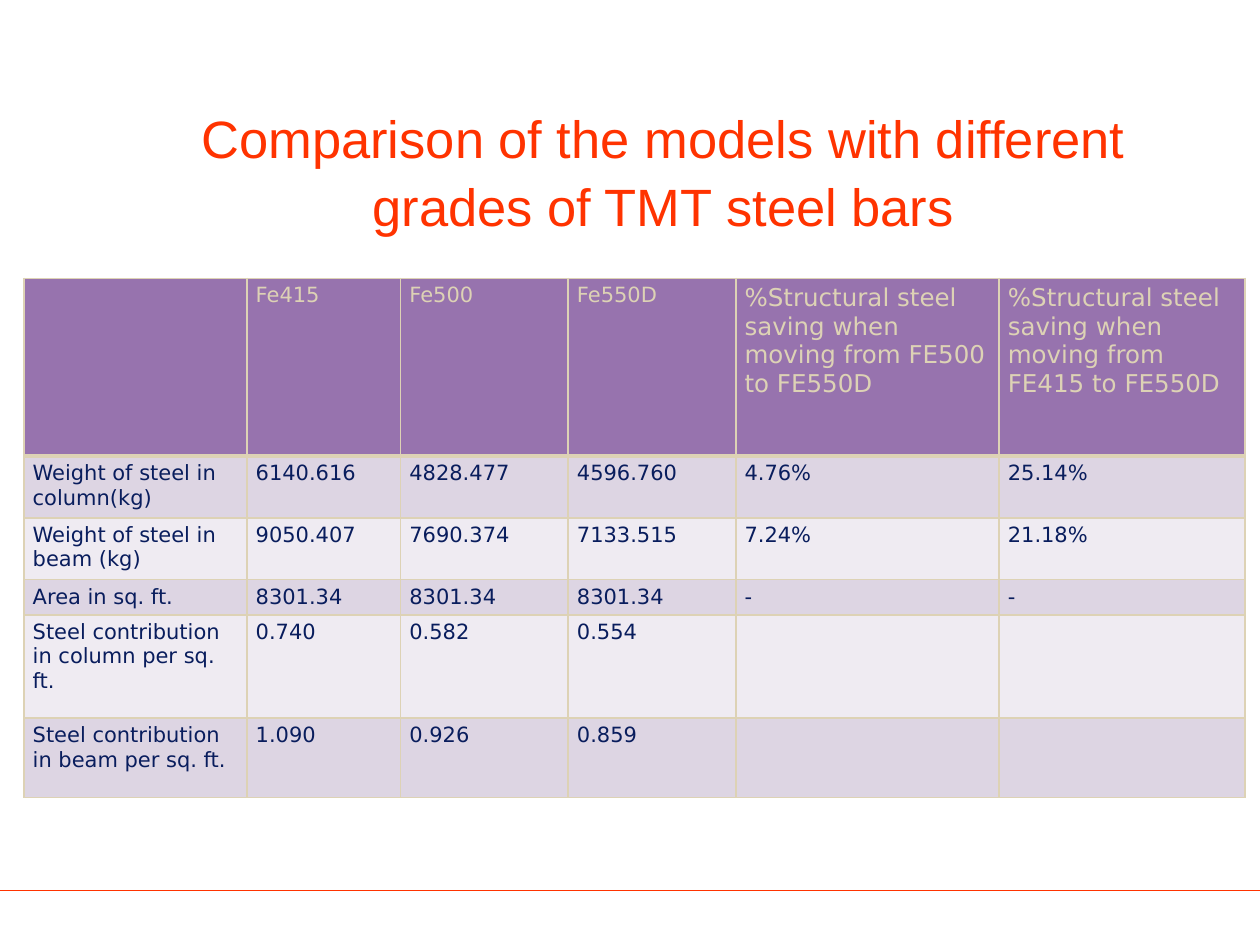
import pptx
import pptx.util
import pptx.dml.color
import pptx.enum.shapes
import pptx.enum.text
import pptx.oxml.ns
from lxml import etree
from pptx.util import Inches

COLORS = {
    "accent": "FF3300",
    "header": "9773AE",
    "band_dark": "DDD5E3",
    "band_light": "EFEBF2",
    "border": "DDD2B5",
    "body_text": "091D5D",
}
TITLE_LINES = ["Comparison of the models with different", "grades of TMT steel bars"]
COLUMN_WIDTHS = [1.77, 1.22, 1.33, 1.33, 2.09, 1.95]
ROW_HEIGHTS = [1.41, 0.49, 0.49, 0.28, 0.82, 0.63]
ROWS = [
    ["", "Fe415", "Fe500", "Fe550D",
     "%Structural steel saving when moving from FE500 to FE550D",
     "%Structural steel saving when moving from FE415 to FE550D"],
    ["Weight of steel in column(kg)", "6140.616", "4828.477", "4596.760", "4.76%", "25.14%"],
    ["Weight of steel in beam (kg)", "9050.407", "7690.374", "7133.515", "7.24%", "21.18%"],
    ["Area in sq. ft.", "8301.34", "8301.34", "8301.34", "-", "-"],
    ["Steel contribution in column per sq. ft.", "0.740", "0.582", "0.554", "", ""],
    ["Steel contribution in beam per sq. ft.", "1.090", "0.926", "0.859", "", ""],
]


def rgb(name):
    return pptx.dml.color.RGBColor.from_string(COLORS[name])


def write_text(para, text, *, size, color, font="DejaVu Sans"):
    span = para.add_run()
    span.text = text
    span.font.size = pptx.util.Pt(size)
    span.font.name = font
    span.font.color.rgb = rgb(color)


def set_borders(cell, bottom_width):
    properties = cell._tc.get_or_add_tcPr()
    widths = {"a:lnL": 1, "a:lnR": 1, "a:lnT": 1, "a:lnB": bottom_width}
    # Borders must come before the cell's fill
    for position, (tag, width) in enumerate(widths.items()):
        line = etree.Element(pptx.oxml.ns.qn(tag), w=str(pptx.util.Pt(width)))
        fill = etree.SubElement(line, pptx.oxml.ns.qn("a:solidFill"))
        etree.SubElement(fill, pptx.oxml.ns.qn("a:srgbClr"), val=COLORS["border"])
        properties.insert(position, line)


def place_title(page, left, top, width, height):
    box = page.shapes.title
    box.left, box.top, box.width, box.height = left, top, width, height
    frame = box.text_frame
    frame.auto_size = pptx.enum.text.MSO_AUTO_SIZE.NONE
    frame.vertical_anchor = pptx.enum.text.MSO_ANCHOR.TOP
    for index, text in enumerate(TITLE_LINES):
        para = frame.add_paragraph() if index else frame.paragraphs[0]
        para.alignment = pptx.enum.text.PP_ALIGN.CENTER
        para.line_spacing = pptx.util.Pt(19.4)
        para.space_before = pptx.util.Pt(19.4 if index else 0)
        write_text(para, text, size=30, color="accent", font="Arial")


def fill_cell(cell, text, row, column):
    header = row == 0
    cell.margin_left = cell.margin_right = Inches(0.07)
    cell.margin_top = cell.margin_bottom = Inches(0.04)
    cell.fill.solid()
    band = "band_dark" if row % 2 else "band_light"
    cell.fill.fore_color.rgb = rgb("header" if header else band)
    set_borders(cell, bottom_width=3 if header else 1)
    if text:
        write_text(cell.text_frame.paragraphs[0], text,
                   size=14 if header and column >= 4 else 12,
                   color="border" if header else "body_text")


def place_table(page, left, top, width, height):
    table = page.shapes.add_table(len(ROWS), len(COLUMN_WIDTHS),
                                  left, top, width, height).table
    for column, size in zip(table.columns, COLUMN_WIDTHS):
        column.width = Inches(size)
    for row, size in zip(table.rows, ROW_HEIGHTS):
        row.height = Inches(size)
    for row, texts in enumerate(ROWS):
        for column, text in enumerate(texts):
            fill_cell(table.cell(row, column), text, row, column)


def place_footer_rule(page, left, top, width):
    rule = page.shapes.add_connector(pptx.enum.shapes.MSO_CONNECTOR.STRAIGHT,
                                     left, top, left + width, top)
    rule.line.color.rgb = rgb("accent")
    rule.line.width = pptx.util.Pt(0.5)
    etree.SubElement(rule._element.spPr, pptx.oxml.ns.qn("a:effectLst"))


def main():
    deck = pptx.Presentation()
    deck.slide_width, deck.slide_height = Inches(10), Inches(7.5)
    page = deck.slides.add_slide(deck.slide_layouts[5])

    # Rule at the foot, title, comparison table
    place_footer_rule(page, Inches(0), Inches(7.07), deck.slide_width)
    place_title(page, Inches(1.41), Inches(1.02), Inches(7.71), Inches(1.15))
    place_table(page, Inches(0.19), Inches(2.21),
                Inches(sum(COLUMN_WIDTHS)), Inches(sum(ROW_HEIGHTS)))
    deck.save("out.pptx")


if __name__ == "__main__":
    main()
